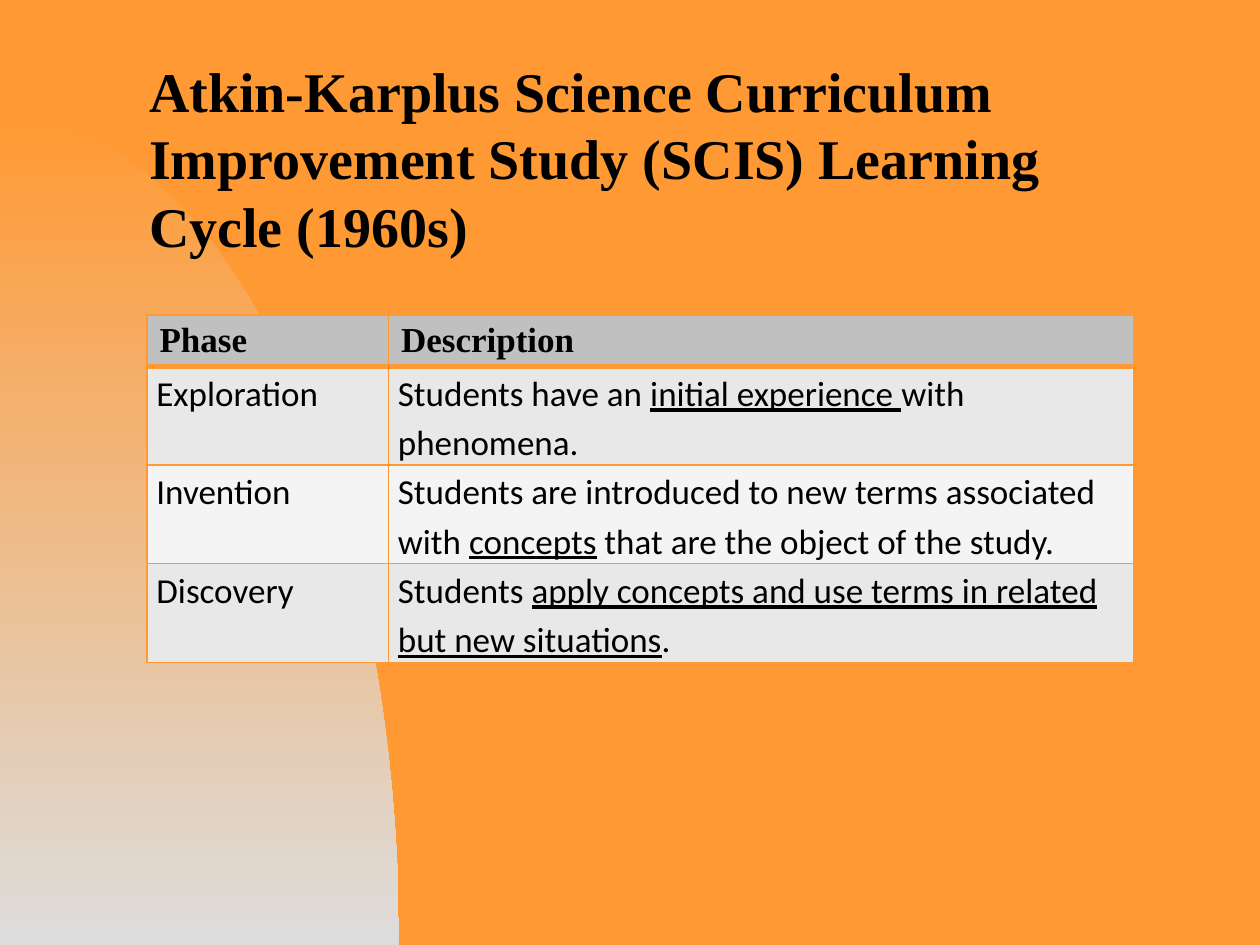
from lxml import etree
from pptx import Presentation
from pptx.dml.color import RGBColor
from pptx.enum.text import MSO_ANCHOR, PP_ALIGN
from pptx.oxml.ns import qn
from pptx.util import Pt

LEFT = PP_ALIGN.LEFT
MIDDLE, TOP = MSO_ANCHOR.MIDDLE, MSO_ANCHOR.TOP

ORANGE = RGBColor(0xFF, 0x99, 0x33)
MIST = RGBColor(0xDD, 0xDD, 0xDD)
HEADER_GRAY = RGBColor(0xC0, 0xC0, 0xC0)
BANDS = (RGBColor(0xE8, 0xE8, 0xE8), RGBColor(0xF4, 0xF4, 0xF4))
BLACK = RGBColor(0, 0, 0)
SERIF, SANS = "Times New Roman", "Calibri"

TITLE = ("Atkin-Karplus Science Curriculum Improvement Study (SCIS) "
         "Learning Cycle (1960s)")
HEADERS = ("Phase", "Description")
# Each description is plain text, underlined text, plain text.
PHASES = [
    ("Exploration",
     ("Students have an ", "initial experience ", "with phenomena.")),
    ("Invention",
     ("Students are introduced to new terms associated with ", "concepts",
      " that are the object of the study.")),
    ("Discovery",
     ("Students ", "apply concepts and use terms in related but new situations",
      ".")),
]

SLIDE_W, SLIDE_H = 720, 540
TITLE_BOX = (78, 48, 582, 84)
TABLE_LEFT, TABLE_TOP = 84, 180
COL_WIDTHS = (138, 426)
HEADER_H, ROW_H = 29.5, 56.1
ARC_TOP, ARC_RIGHT = 66, 228
ARC_STEPS = 60


def write(tf, parts, size=20, font=SANS, bold=False, spacing=None):
    """Fill a frame with one paragraph; every second part is underlined."""
    p = tf.paragraphs[0]
    p.alignment = LEFT
    p.line_spacing = spacing
    for i, text in enumerate(parts):
        r = p.add_run()
        r.text = text
        f = r.font
        f.size, f.name, f.bold = Pt(size), font, bold
        f.underline = i % 2 == 1
        f.color.rgb = BLACK


def add_backdrop(slide):
    """Quarter arc down the left edge, behind everything else."""
    controls = ((0, ARC_TOP), (126, ARC_TOP), (ARC_RIGHT, 279),
                (ARC_RIGHT, SLIDE_H))

    def bezier(t):
        weights = ((1 - t) ** 3, 3 * t * (1 - t) ** 2, 3 * t * t * (1 - t), t ** 3)
        return tuple(Pt(sum(w * c[axis] for w, c in zip(weights, controls)))
                     for axis in (0, 1))

    points = [bezier(i / ARC_STEPS) for i in range(ARC_STEPS + 1)]
    builder = slide.shapes.build_freeform(*points[0])
    builder.add_line_segments(points[1:] + [(0, Pt(SLIDE_H))], close=True)
    sp = builder.convert_to_shape()
    sp.shadow.inherit = False
    sp.line.fill.background()
    sp.fill.gradient()
    sp.fill.gradient_angle = 270
    for stop, color, position in zip(sp.fill.gradient_stops, (ORANGE, MIST), (0, 1)):
        stop.color.rgb = color
        stop.position = position
    slide.shapes._spTree.insert(2, sp._element)


def set_borders(cell, bottom=1):
    tcPr = cell._tc.get_or_add_tcPr()
    widths = {"a:lnL": 1, "a:lnR": 1, "a:lnT": 1, "a:lnB": bottom}
    for i, (tag, width) in enumerate(widths.items()):
        ln = etree.Element(qn(tag), w=str(Pt(width)))
        fill = etree.SubElement(ln, qn("a:solidFill"))
        etree.SubElement(fill, qn("a:srgbClr"), val=str(ORANGE))
        tcPr.insert(i, ln)


def style_cell(cell, color, bottom=1):
    cell.fill.solid()
    cell.fill.fore_color.rgb = color
    cell.vertical_anchor = TOP
    set_borders(cell, bottom)


def add_phase_table(slide):
    height = HEADER_H + ROW_H * len(PHASES)
    table = slide.shapes.add_table(
        len(PHASES) + 1, len(HEADERS), Pt(TABLE_LEFT), Pt(TABLE_TOP),
        Pt(sum(COL_WIDTHS)), Pt(height)).table
    for column, width in zip(table.columns, COL_WIDTHS):
        column.width = Pt(width)
    for i, row in enumerate(table.rows):
        row.height = Pt(ROW_H if i else HEADER_H)

    for col, text in enumerate(HEADERS):
        cell = table.cell(0, col)
        style_cell(cell, HEADER_GRAY, bottom=3)
        write(cell.text_frame, [text], font=SERIF, bold=True)

    for i, (phase, description) in enumerate(PHASES):
        for col, parts in enumerate(((phase,), description)):
            cell = table.cell(i + 1, col)
            style_cell(cell, BANDS[i % 2])
            cell.margin_left = cell.margin_right = Pt(5.4)
            cell.margin_top = cell.margin_bottom = 0
            write(cell.text_frame, parts, spacing=1.15)


def main():
    prs = Presentation()
    prs.slide_width, prs.slide_height = Pt(SLIDE_W), Pt(SLIDE_H)
    slide = prs.slides.add_slide(prs.slide_layouts[5])
    slide.background.fill.solid()
    slide.background.fill.fore_color.rgb = ORANGE

    add_backdrop(slide)
    title = slide.shapes.title
    title.left, title.top, title.width, title.height = map(Pt, TITLE_BOX)
    title.text_frame.word_wrap = True
    title.text_frame.vertical_anchor = MIDDLE
    write(title.text_frame, [TITLE], size=32, font=SERIF, bold=True)
    add_phase_table(slide)
    prs.save("out.pptx")


if __name__ == "__main__":
    main()
